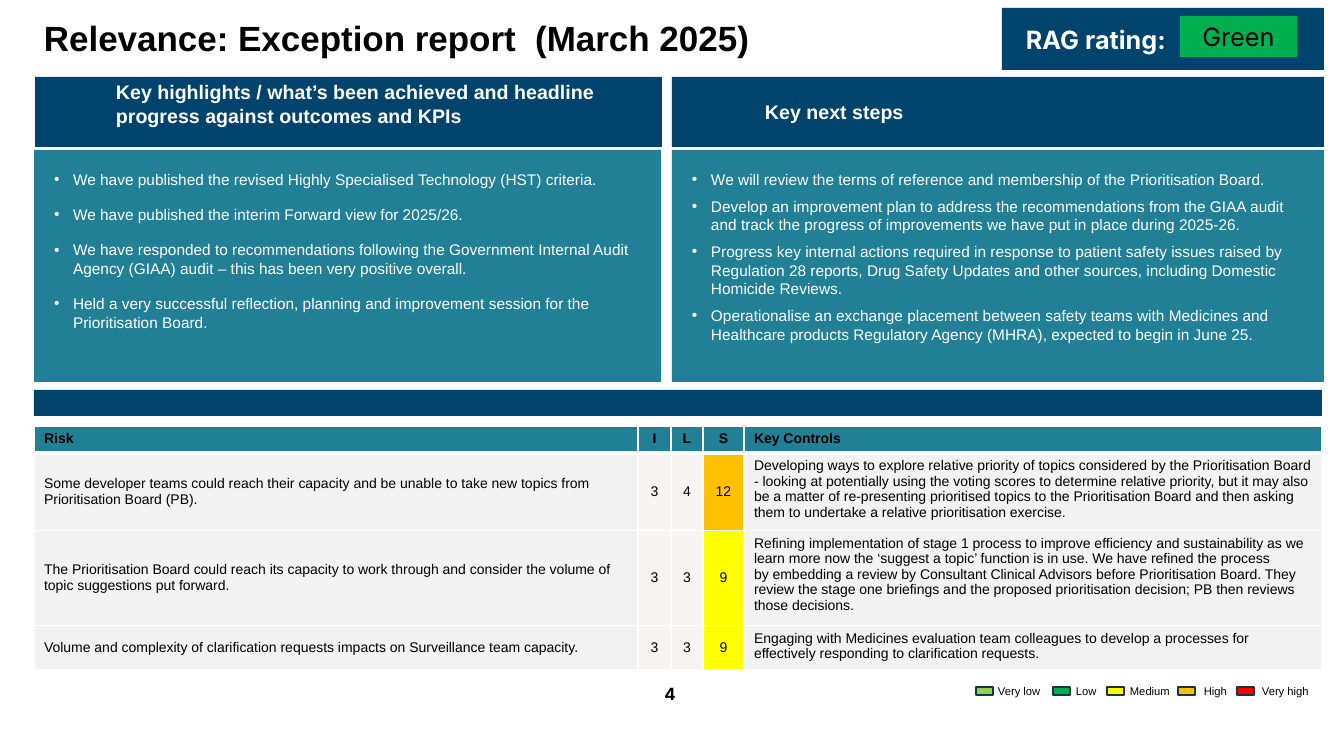
from dataclasses import dataclass

from lxml import etree
from pptx import Presentation
from pptx.dml.color import RGBColor
from pptx.enum.shapes import MSO_SHAPE
from pptx.enum.text import MSO_ANCHOR, PP_ALIGN
from pptx.oxml.ns import qn
from pptx.util import Emu, Pt

RECTANGLE = MSO_SHAPE.RECTANGLE
TOP, MIDDLE = MSO_ANCHOR.TOP, MSO_ANCHOR.MIDDLE
LEFT, CENTER = PP_ALIGN.LEFT, PP_ALIGN.CENTER


@dataclass(frozen=True)
class Theme:
    navy: str = "00436C"
    teal: str = "228096"
    white: str = "FFFFFF"
    black: str = "000000"
    outline: str = "0F3842"
    row: str = "F2F2F2"
    score: str = "F7F4F1"
    very_low: str = "92D050"
    green: str = "00B050"
    yellow: str = "FFFF00"
    amber: str = "FFC000"
    red: str = "FF0000"
    sans: str = "Arial"
    display: str = "Inter"
    title: int = 25
    rating: int = 18
    heading: int = 14
    number: int = 12
    body: int = 11
    cell: int = 10
    legend: int = 8


THEME = Theme()

TITLE = "Relevance: Exception report  (March 2025)"
RATING_LABEL, RATING = "RAG rating:", "Green"
PAGE_NUMBER = "4"

PANELS = [
    {
        "heading": "Key highlights / what’s been achieved and headline progress against outcomes and KPIs",
        "band": (35, 77, 627, 70),
        "heading_box": (106, 75, 545, 57),
        "body": (34, 150, 627, 232),
        "gap": 12,
        "bullets": [
            "We have published the revised Highly Specialised Technology (HST) criteria.",
            "We have published the interim Forward view for 2025/26.",
            "We have responded to recommendations following the Government Internal Audit Agency (GIAA) audit – this has been very positive overall.",
            "Held a very successful reflection, planning and improvement session for the Prioritisation Board.",
        ],
    },
    {
        "heading": "Key next steps",
        "band": (672, 77, 652, 70),
        "heading_box": (755, 95, 361, 34),
        "body": (672, 150, 652, 232),
        "gap": 6,
        "bullets": [
            "We will review the terms of reference and membership of the Prioritisation Board.",
            "Develop an improvement plan to address the recommendations from the GIAA audit and track the progress of improvements we have put in place during 2025-26.",
            "Progress key internal actions required in response to patient safety issues raised by Regulation 28 reports, Drug Safety Updates and other sources, including Domestic Homicide Reviews.",
            "Operationalise an exchange placement between safety teams with Medicines and Healthcare products Regulatory Agency (MHRA), expected to begin in June 25.",
        ],
    },
]

RISKS = [
    ("Risk", "I", "L", "S", "Key Controls"),
    (
        "Some developer teams could reach their capacity and be unable to take new topics from Prioritisation Board (PB).",
        "3", "4", "12",
        "Developing ways to explore relative priority of topics considered by the Prioritisation Board - looking at potentially using the voting scores to determine relative priority, but it may also be a matter of re-presenting prioritised topics to the Prioritisation Board and then asking them to undertake a relative prioritisation exercise.",
    ),
    (
        "The Prioritisation Board could reach its capacity to work through and consider the volume of topic suggestions put forward.",
        "3", "3", "9",
        "Refining implementation of stage 1 process to improve efficiency and sustainability as we learn more now the ‘suggest a topic’ function is in use. We have refined the process by\u00a0embedding a review by Consultant Clinical Advisors before Prioritisation Board. They review the stage one briefings and the proposed prioritisation decision; PB then reviews those decisions.",
    ),
    (
        "Volume and complexity of clarification requests impacts on Surveillance team capacity.",
        "3", "3", "9",
        "Engaging with Medicines evaluation team colleagues to develop a processes for effectively responding to clarification requests.",
    ),
]
COLUMN_WIDTHS = [604, 33, 32, 41, 578]
ROW_HEIGHTS = [27, 77, 95, 43]
SCORE_FILLS = {"12": THEME.amber, "9": THEME.yellow}

LEGEND = [
    ("Very low", THEME.very_low, 976, 988),
    ("Low", THEME.green, 1053, 1066),
    ("Medium", THEME.yellow, 1107, 1120),
    ("High", THEME.amber, 1178, 1194),
    ("Very high", THEME.red, 1237, 1252),
]


def px(value):
    return Emu(round(value * 914400 / 100.8))


def colour(value):
    return RGBColor.from_string(value)


def add_rectangle(page, bounds, fill, line=None):
    box = page.shapes.add_shape(RECTANGLE, *map(px, bounds))
    box.shadow.inherit = False
    box.fill.solid()
    box.fill.fore_color.rgb = colour(fill)
    if line:
        box.line.color.rgb = colour(line)
        box.line.width = Pt(1)
    else:
        box.line.fill.background()
    return box


def style(para, size, ink, font=THEME.sans, bold=False, align=LEFT):
    para.alignment = align
    for span in para.runs:
        span.font.name = font
        span.font.size = Pt(size)
        span.font.bold = bold
        span.font.color.rgb = colour(ink)


def write(box, text, size, ink, anchor=TOP, **options):
    frame = box.text_frame
    frame.word_wrap = True
    frame.vertical_anchor = anchor
    frame.text = text
    style(frame.paragraphs[0], size, ink, **options)
    return frame


def add_label(page, bounds, text, size, ink, **options):
    return write(page.shapes.add_textbox(*map(px, bounds)), text, size, ink, **options)


def add_bullet(para):
    properties = para._p.get_or_add_pPr()
    properties.set("marL", str(px(19)))
    properties.set("indent", str(-px(19)))
    etree.SubElement(properties, qn("a:buFont"), typeface=THEME.sans)
    etree.SubElement(properties, qn("a:buChar"), char="•")


def add_panel(page, panel):
    add_rectangle(page, panel["band"], THEME.navy)
    add_label(page, panel["heading_box"], panel["heading"], THEME.heading, THEME.white, bold=True)
    frame = add_rectangle(page, panel["body"], THEME.teal).text_frame
    frame.word_wrap = True
    frame.vertical_anchor = TOP
    frame.margin_left = frame.margin_right = frame.margin_top = frame.margin_bottom = px(20)
    frame.text = "\n".join(panel["bullets"])
    for index, para in enumerate(frame.paragraphs):
        add_bullet(para)
        para.space_before = Pt(panel["gap"] if index else 0)
        style(para, THEME.body, THEME.white)


def add_borders(cell, header):
    properties = cell._tc.get_or_add_tcPr()
    for index, side in enumerate(("lnL", "lnR", "lnT", "lnB")):
        width = 3 if header and side == "lnB" else 1
        line = etree.Element(qn(f"a:{side}"), w=str(Pt(width)))
        fill = etree.SubElement(line, qn("a:solidFill"))
        etree.SubElement(fill, qn("a:srgbClr"), val=THEME.white)
        properties.insert(index, line)


def add_risks(page):
    bounds = (34, 426, sum(COLUMN_WIDTHS), sum(ROW_HEIGHTS))
    table = page.shapes.add_table(len(RISKS), len(COLUMN_WIDTHS), *map(px, bounds)).table
    for column, width in zip(table.columns, COLUMN_WIDTHS):
        column.width = px(width)
    for row, height in zip(table.rows, ROW_HEIGHTS):
        row.height = px(height)
    for row, values in enumerate(RISKS):
        header = row == 0
        fills = [THEME.row, THEME.score, THEME.score, SCORE_FILLS.get(values[3]), THEME.row]
        for column, text in enumerate(values):
            cell = table.cell(row, column)
            cell.text = text
            cell.vertical_anchor = TOP if header or column == 4 else MIDDLE
            cell.fill.solid()
            cell.fill.fore_color.rgb = colour(THEME.teal if header else fills[column])
            add_borders(cell, header)
            align = CENTER if 0 < column < 4 else LEFT
            style(cell.text_frame.paragraphs[0], THEME.cell, THEME.black, bold=header, align=align)


def main():
    deck = Presentation()
    deck.slide_width, deck.slide_height = px(1344), px(756)
    page = deck.slides.add_slide(deck.slide_layouts[6])
    title = add_label(page, (34, 16, 900, 55), TITLE, THEME.title, THEME.black, bold=True)
    title.paragraphs[0].line_spacing = 0.9
    banner = add_rectangle(page, (1002, 8, 322, 62), THEME.navy)
    write(banner, RATING_LABEL, THEME.rating, THEME.white, MIDDLE,
          font=THEME.display, bold=True).margin_left = px(24)
    badge = add_rectangle(page, (1180, 16, 117, 41), THEME.green)
    write(badge, RATING, THEME.rating, THEME.black, MIDDLE, font=THEME.display, align=CENTER)
    for panel in PANELS:
        add_panel(page, panel)
    add_rectangle(page, (34, 390, 1288, 26), THEME.navy)
    add_risks(page)
    add_label(page, (519, 679, 302, 40), PAGE_NUMBER, THEME.number, THEME.black,
              font=THEME.display, bold=True, align=CENTER)
    for text, fill, swatch_left, label_left in LEGEND:
        add_rectangle(page, (swatch_left, 687, 17, 8), fill, THEME.outline)
        add_label(page, (label_left, 679, 71, 24), text, THEME.legend, THEME.black)
    deck.save("out.pptx")


if __name__ == "__main__":
    main()
